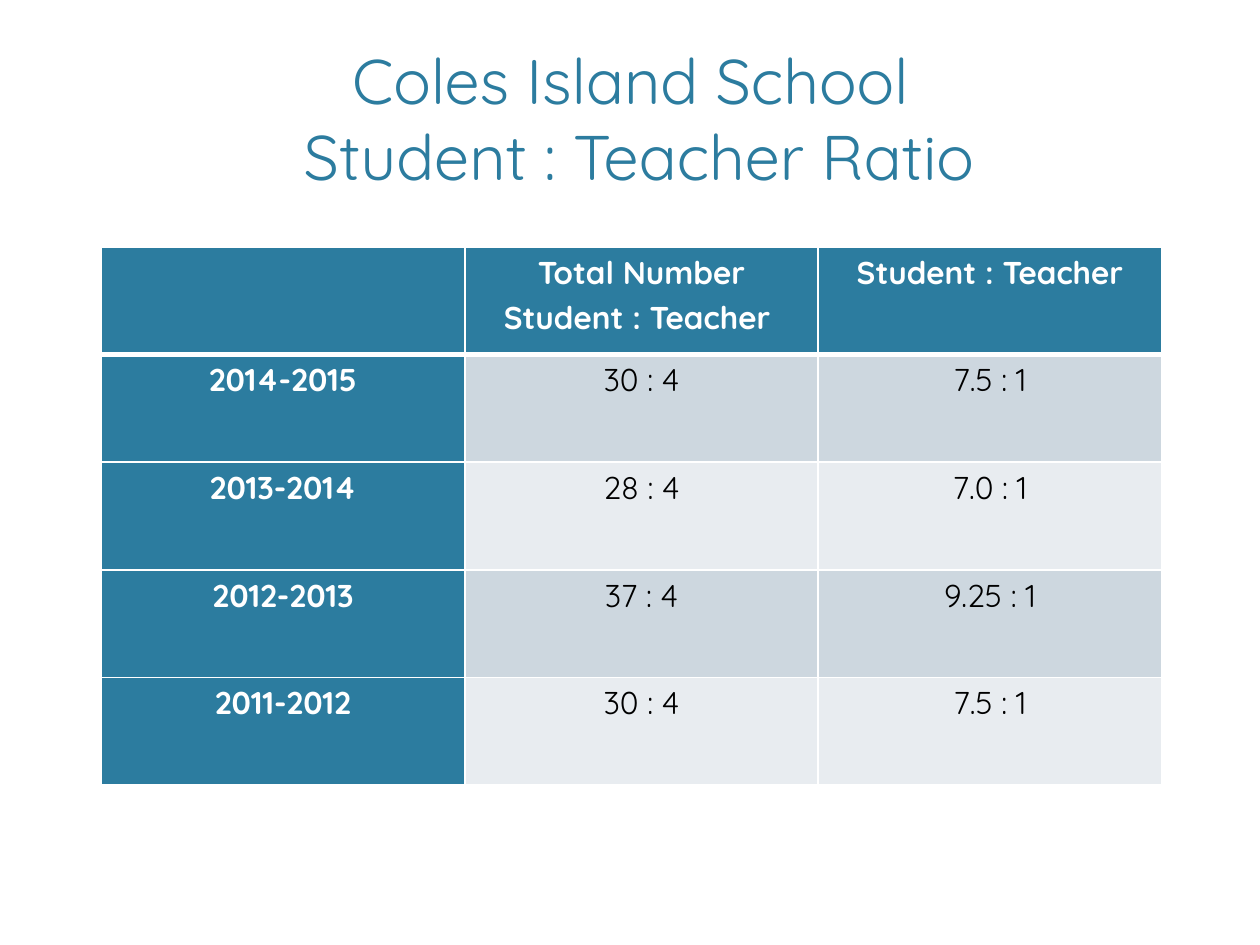
from lxml.etree import SubElement
from pptx import Presentation
from pptx.dml.color import RGBColor
from pptx.enum.text import MSO_ANCHOR, PP_ALIGN
from pptx.oxml.ns import qn
from pptx.util import Emu, Pt

SCALE = 914400 / 126
TEAL, WHITE, BLACK = "2C7C9F", "FFFFFF", "000000"
BANDS = ["CDD7DF", "E8ECF0"]
WIDTHS = [364, 353, 344]
ROWS = [
    ["", "Total Number Student : Teacher ", "Student : Teacher"],
    ["2014-2015", "30 : 4", "7.5 : 1"],
    ["2013-2014", "28 : 4", "7.0 : 1"],
    ["2012-2013", "37 : 4", "9.25 : 1"],
    ["2011-2012", "30 : 4", "7.5 : 1"],
]


def px(n):
    """Turn pixels into EMU."""
    return Emu(round(n * SCALE))


def paint(color, code):
    """Set a colour format from a hex string."""
    color.rgb = RGBColor.from_string(code)


def style(para, size, code, bold=False):
    """Centre a paragraph and set its font."""
    para.alignment = PP_ALIGN.CENTER
    para.font.name = "Quicksand"
    para.font.size = Pt(size)
    para.font.bold = bold
    paint(para.font.color, code)


def add_title(slide, x, y, w, h):
    """Place the two-line title at the bottom of its box."""
    frame = slide.shapes.add_textbox(px(x), px(y), px(w), px(h)).text_frame
    frame.word_wrap = True
    frame.vertical_anchor = MSO_ANCHOR.BOTTOM
    para = frame.paragraphs[0]
    para.text = "Coles Island School\v Student : Teacher Ratio"
    style(para, 36, TEAL)


def add_edges(cell, top, bottom):
    """Draw white borders round a cell, with top and bottom widths in points."""
    props = cell._tc.get_or_add_tcPr()
    for side, width in zip("LRTB", [1, 1, top, bottom]):
        line = SubElement(props, qn(f"a:ln{side}"), w=str(Pt(width)))
        fill = SubElement(line, qn("a:solidFill"))
        SubElement(fill, qn("a:srgbClr"), val=WHITE)


def fill_cell(cell, text, row, col):
    """Write one cell, styled by its place in the grid."""
    head = row == 0 or col == 0
    add_edges(cell, 3 if row == 1 else 1, 3 if row == 0 else 1)
    cell.fill.solid()
    paint(cell.fill.fore_color, TEAL if head else BANDS[(row - 1) % 2])
    cell.margin_left = cell.margin_right = px(9)
    cell.margin_top = cell.margin_bottom = 0
    para = cell.text_frame.paragraphs[0]
    para.text = text
    para.line_spacing = 1.15
    style(para, 18, WHITE if head else BLACK, head)


def add_ratios(slide, x, y, w, h):
    """Place the ratio table with equal rows."""
    count = len(ROWS)
    table = slide.shapes.add_table(
        count, len(WIDTHS), px(x), px(y), px(w), px(h)).table
    for column, width in zip(table.columns, WIDTHS):
        column.width = px(width)
    for r, texts in enumerate(ROWS):
        table.rows[r].height = px(h / count)
        for c, text in enumerate(texts):
            fill_cell(table.cell(r, c), text, r, c)


def main():
    """Build the slide and save it."""
    deck = Presentation()
    deck.slide_width, deck.slide_height = px(1260), px(945)
    slide = deck.slides.add_slide(deck.slide_layouts[6])
    add_title(slide, 76, 15, 1109, 184)
    add_ratios(slide, 101, 247, sum(WIDTHS), 538)
    deck.save("out.pptx")


if __name__ == "__main__":
    main()
